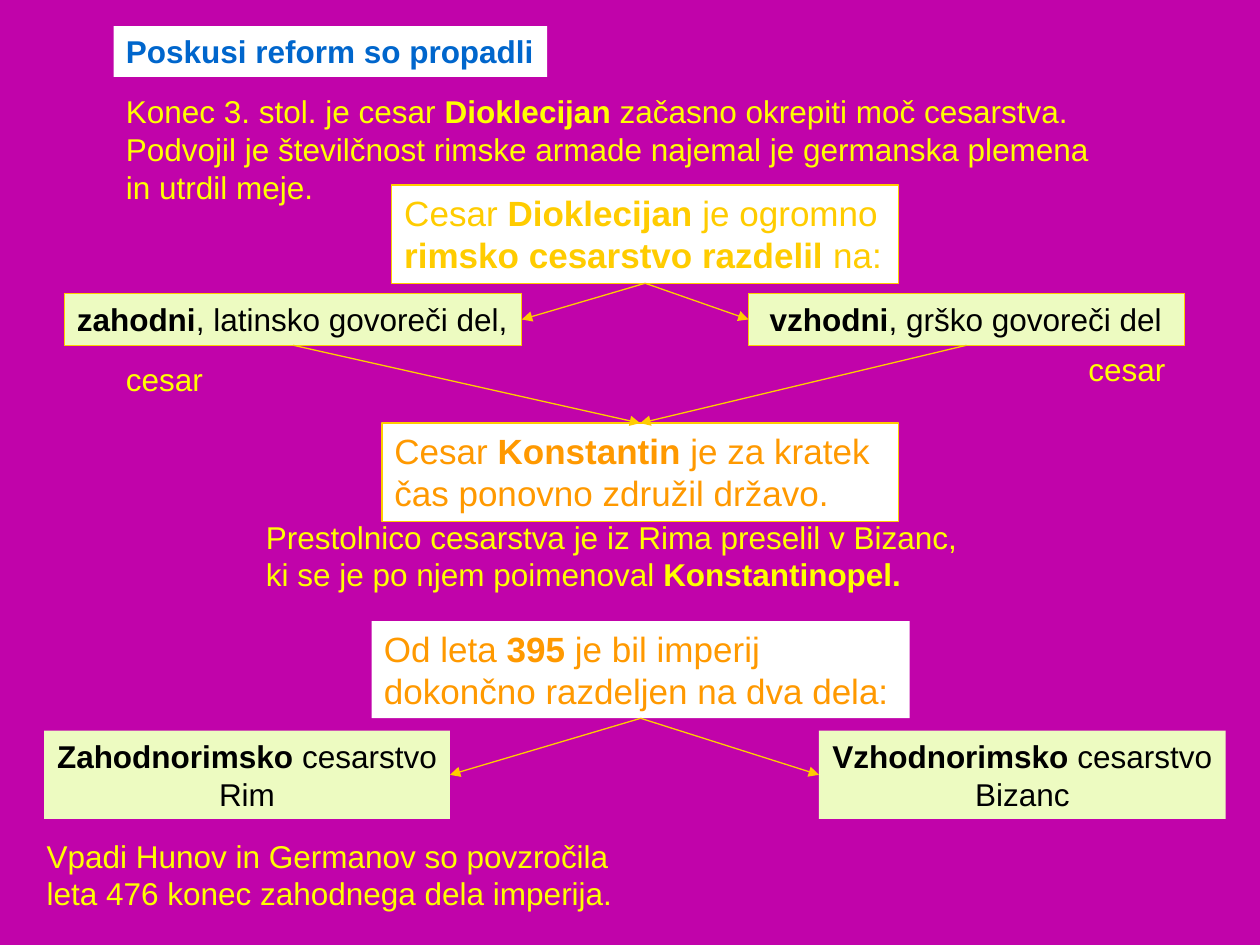
from dataclasses import dataclass

from lxml import etree
from pptx import Presentation
from pptx import util as u
from pptx.dml.color import RGBColor
from pptx.enum import shapes, text
from pptx.oxml.ns import qn


@dataclass(frozen=True)
class Theme:
    back: str = "C103AA"
    white: str = "FFFFFF"
    lime: str = "EDFBC1"
    gold: str = "FFCC00"
    yellow: str = "FFFF00"
    orange: str = "FF9900"
    blue: str = "0066CC"
    black: str = "000000"
    font: str = "Arial"
    body: int = 18
    large: int = 20
    rule: float = 0.75


THEME = Theme()
TOP, LEFT, BOTTOM, RIGHT = range(4)  # connection sites of a rectangle


def rgb(code):
    return RGBColor.from_string(code)


def write(shape, lines, color, size, wrap, align):
    """Fill the frame; text between asterisks is bold."""
    frame = shape.text_frame
    frame.word_wrap = wrap
    frame.auto_size = text.MSO_AUTO_SIZE.SHAPE_TO_FIT_TEXT
    frame.vertical_anchor = text.MSO_ANCHOR.TOP
    for i, line in enumerate(lines):
        para = frame.paragraphs[0] if i == 0 else frame.add_paragraph()
        para.alignment = align
        for j, part in enumerate(line.split("*")):
            if not part:
                continue
            run = para.add_run()
            run.text = part
            run.font.name = THEME.font
            run.font.size = u.Pt(size)
            run.font.bold = j % 2 == 1
            run.font.color.rgb = rgb(color)


def add_note(slide, place, *lines, wrap=True):
    note = slide.shapes.add_textbox(*map(u.Cm, place))
    write(note, lines, THEME.yellow, THEME.body, wrap, text.PP_ALIGN.LEFT)


def add_box(slide, place, *lines, fill=THEME.white, color=THEME.orange,
            size=THEME.large, edge=False, wrap=True, align=text.PP_ALIGN.LEFT):
    box = slide.shapes.add_shape(shapes.MSO_SHAPE.RECTANGLE, *map(u.Cm, place))
    box.shadow.inherit = False
    box.fill.solid()
    box.fill.fore_color.rgb = rgb(fill)
    if edge:
        box.line.color.rgb = rgb(THEME.gold)
        box.line.width = u.Pt(THEME.rule)
    else:
        box.line.fill.background()
    write(box, lines, color, size, wrap, align)
    return box


def add_part(slide, place, *lines, **style):
    """Box for one half of the empire."""
    return add_box(slide, place, *lines, fill=THEME.lime, color=THEME.black,
                   size=THEME.body, **style)


def add_arrow(slide, start, out, end, into):
    line = slide.shapes.add_connector(shapes.MSO_CONNECTOR.STRAIGHT, 0, 0, 0, 0)
    line.begin_connect(start, out)
    line.end_connect(end, into)
    line.line.color.rgb = rgb(THEME.gold)
    line.line.width = u.Pt(THEME.rule)
    tip = etree.SubElement(line.line._get_or_add_ln(), qn("a:tailEnd"))
    tip.set("type", "triangle")
    etree.SubElement(line._element.spPr, qn("a:effectLst"))


def main():
    deck = Presentation()
    deck.slide_width, deck.slide_height = u.Cm(25.4), u.Cm(19.05)
    slide = deck.slides.add_slide(deck.slide_layouts[6])
    slide.background.fill.solid()
    slide.background.fill.fore_color.rgb = rgb(THEME.back)

    # Heading and introduction
    add_box(slide, (2.29, 0.53, 8.74, 1.02), "*Poskusi reform so propadli*",
            color=THEME.blue, size=THEME.body, wrap=False)
    add_note(slide, (2.29, 1.73, 20.4, 2.54),
             "Konec 3. stol. je cesar* Dioklecijan *začasno okrepiti moč cesarstva. "
             "Podvojil je številčnost rimske armade najemal je germanska plemena "
             "in utrdil meje.")

    # First division
    split = add_box(slide, (7.9, 3.73, 10.21, 1.98),
                    "Cesar *Dioklecijan *je ogromno",
                    "*rimsko cesarstvo razdelil *na:", color=THEME.gold, edge=True)
    east = add_part(slide, (15.09, 5.92, 8.79, 1.04),
                    " *vzhodni*, grško govoreči del", edge=True, wrap=False)
    west = add_part(slide, (1.3, 5.92, 9.22, 1.04),
                    "*zahodni*, latinsko govoreči del,", edge=True, wrap=False)
    for left, top in ((2.29, 7.14), (21.69, 6.93)):
        add_note(slide, (left, top, 2.06, 1.02), "cesar", wrap=False)

    # Reunion
    union = add_box(slide, (7.7, 8.53, 10.41, 1.98),
                    "Cesar *Konstantin *je za kratek",
                    "čas ponovno združil državo.", edge=True)
    add_note(slide, (5.11, 10.31, 14.63, 1.78),
             "Prestolnico cesarstva je iz Rima preselil v Bizanc,",
             "ki se je po njem poimenoval *Konstantinopel.*", wrap=False)

    # Final division
    final = add_box(slide, (7.49, 12.52, 10.85, 1.96),
                    "Od leta *395* je bil imperij dokončno razdeljen na dva dela:")
    add_note(slide, (0.69, 16.74, 12.67, 1.78),
             "Vpadi Hunov in Germanov so povzročila leta 476 konec "
             "zahodnega dela imperija.")
    rome = add_part(slide, (0.89, 14.73, 8.18, 1.78),
                    "*Zahodnorimsko *cesarstvo", "Rim",
                    wrap=False, align=text.PP_ALIGN.CENTER)
    byzant = add_part(slide, (16.51, 14.73, 8.2, 1.78),
                      "*Vzhodnorimsko *cesarstvo", "Bizanc",
                      align=text.PP_ALIGN.CENTER)

    # Arrows
    for start, lhs, rhs in ((split, west, east), (final, rome, byzant)):
        add_arrow(slide, start, BOTTOM, lhs, RIGHT)
        add_arrow(slide, start, BOTTOM, rhs, LEFT)
    for half in (west, east):
        add_arrow(slide, half, BOTTOM, union, TOP)

    deck.save("out.pptx")


if __name__ == "__main__":
    main()
